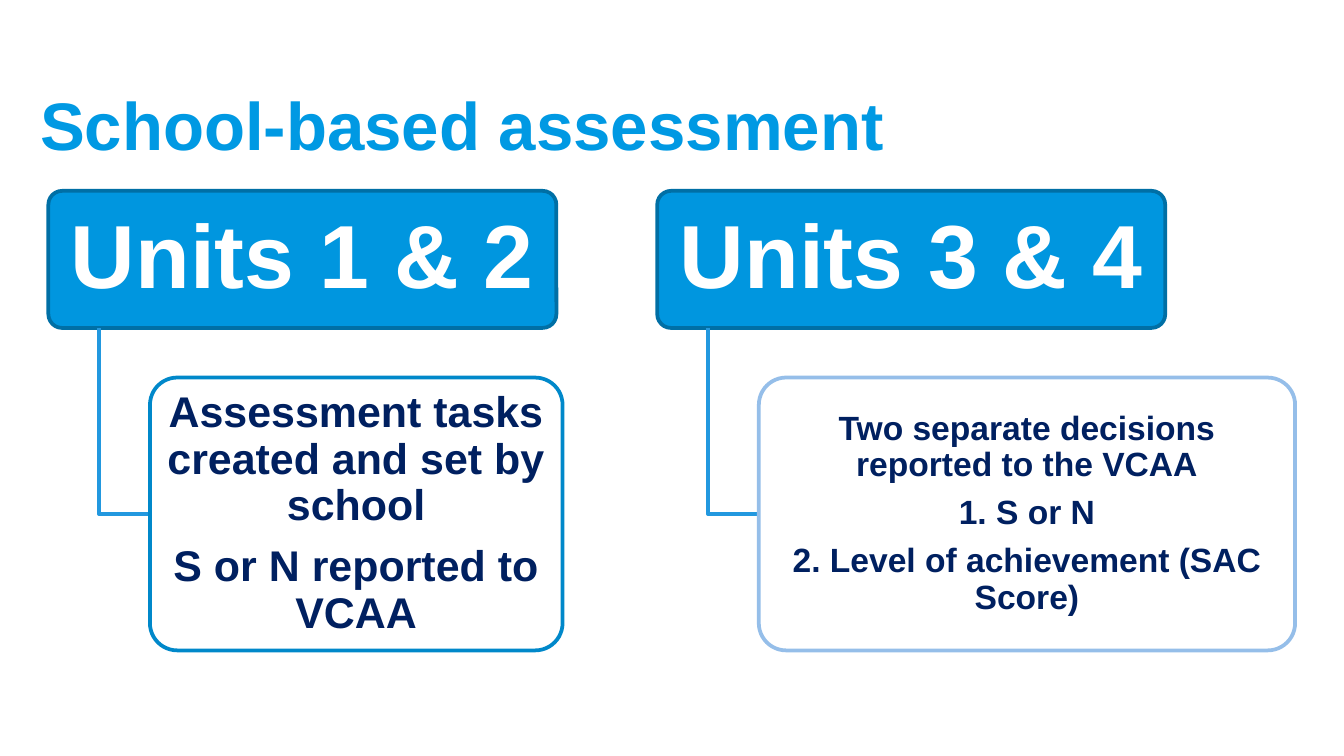
from lxml import etree
from pptx import Presentation
from pptx.dml.color import RGBColor
from pptx.enum import shapes, text
from pptx.oxml.ns import qn
from pptx.util import Inches, Pt

SKY = RGBColor(0x00, 0x99, 0xE3)
BLUE = RGBColor(0x00, 0x96, 0xDF)
EDGE = RGBColor(0x00, 0x6F, 0xA5)
LINK = RGBColor(0x22, 0x98, 0xDF)
MID = RGBColor(0x00, 0x88, 0xCA)
PALE = RGBColor(0x95, 0xBE, 0xE9)
NAVY = RGBColor(0x00, 0x20, 0x60)
WHITE = RGBColor(0xFF, 0xFF, 0xFF)

TITLE = "School-based assessment"
# heading, body lines, body size, body width, body edge, side inset
UNITS = [
    ("Units 1 & 2",
     ["Assessment tasks created and set by school", "S or N reported to VCAA"],
     23, 3.07, MID, 0.05),
    ("Units 3 & 4",
     ["Two separate decisions reported to the VCAA", "1. S or N",
      "2. Level of achievement (SAC Score)"],
     18, 3.99, PALE, 0.04),
]
LEFT, STEP = 0.36, 4.53
HEAD_TOP, HEAD_W, HEAD_H = 1.42, 3.78, 1.02
BODY_TOP, BODY_H = 2.81, 2.03
STEM = HEAD_W / 10  # the link drops here; the body starts at twice this


def style(par, size, color):
    par.font.name = "Arial"
    par.font.size = Pt(size)
    par.font.bold = True
    par.font.color.rgb = color


def card(slide, place, fill, edge, lines, size, color, inset):
    """Add a rounded box with centred text."""
    box = slide.shapes.add_shape(
        shapes.MSO_SHAPE.ROUNDED_RECTANGLE, *map(Inches, place))
    box.adjustments[0] = 0.1
    box.shadow.inherit = False
    box.fill.solid()
    box.fill.fore_color.rgb = fill
    box.line.color.rgb = edge
    box.line.width = Pt(2)
    frame = box.text_frame
    frame.word_wrap = True
    frame.vertical_anchor = text.MSO_ANCHOR.MIDDLE
    side, end = map(Inches, inset)
    frame.margin_left = frame.margin_right = side
    frame.margin_top = frame.margin_bottom = end
    frame.text = "\n".join(lines)
    for par in frame.paragraphs:
        par.alignment = text.PP_ALIGN.CENTER
        par.line_spacing = 0.9
        par.space_after = Pt(size * 0.35)
        style(par, size, color)
    return box


def fade(box, percent):
    """Set the opacity of a solid fill."""
    color = box._element.spPr.find(qn("a:solidFill"))[0]
    etree.SubElement(color, qn("a:alpha")).set("val", str(percent * 1000))


def link(slide, x, y, right, low):
    """Draw an elbow line down from (x, y), then right."""
    path = slide.shapes.build_freeform(Inches(x), Inches(y))
    path.add_line_segments(
        [(Inches(x), Inches(low)), (Inches(right), Inches(low))], close=False)
    elbow = path.convert_to_shape()
    elbow.shadow.inherit = False
    elbow.fill.background()
    elbow.line.color.rgb = LINK
    elbow.line.width = Pt(2)


deck = Presentation()
deck.slide_width = Inches(10)
deck.slide_height = deck.slide_width * 9 // 16
slide = deck.slides.add_slide(deck.slide_layouts[6])

title = slide.shapes.add_textbox(*map(Inches, (0.2, 0.45, 9.53, 0.94)))
title.text_frame.word_wrap = True
title.text_frame.vertical_anchor = text.MSO_ANCHOR.MIDDLE
title.text_frame.text = TITLE
style(title.text_frame.paragraphs[0], 36, SKY)

for i, (head, lines, size, width, edge, side) in enumerate(UNITS):
    x = LEFT + i * STEP
    inner = x + 2 * STEM
    card(slide, (x, HEAD_TOP, HEAD_W, HEAD_H), BLUE, EDGE,
         [head], 48, WHITE, (0.1, 0.07))
    link(slide, x + STEM, HEAD_TOP + HEAD_H, inner, BODY_TOP + BODY_H / 2)
    body = card(slide, (inner, BODY_TOP, width, BODY_H), WHITE, edge,
                lines, size, NAVY, (side, 0.03))
    fade(body, 90)

deck.save("out.pptx")
